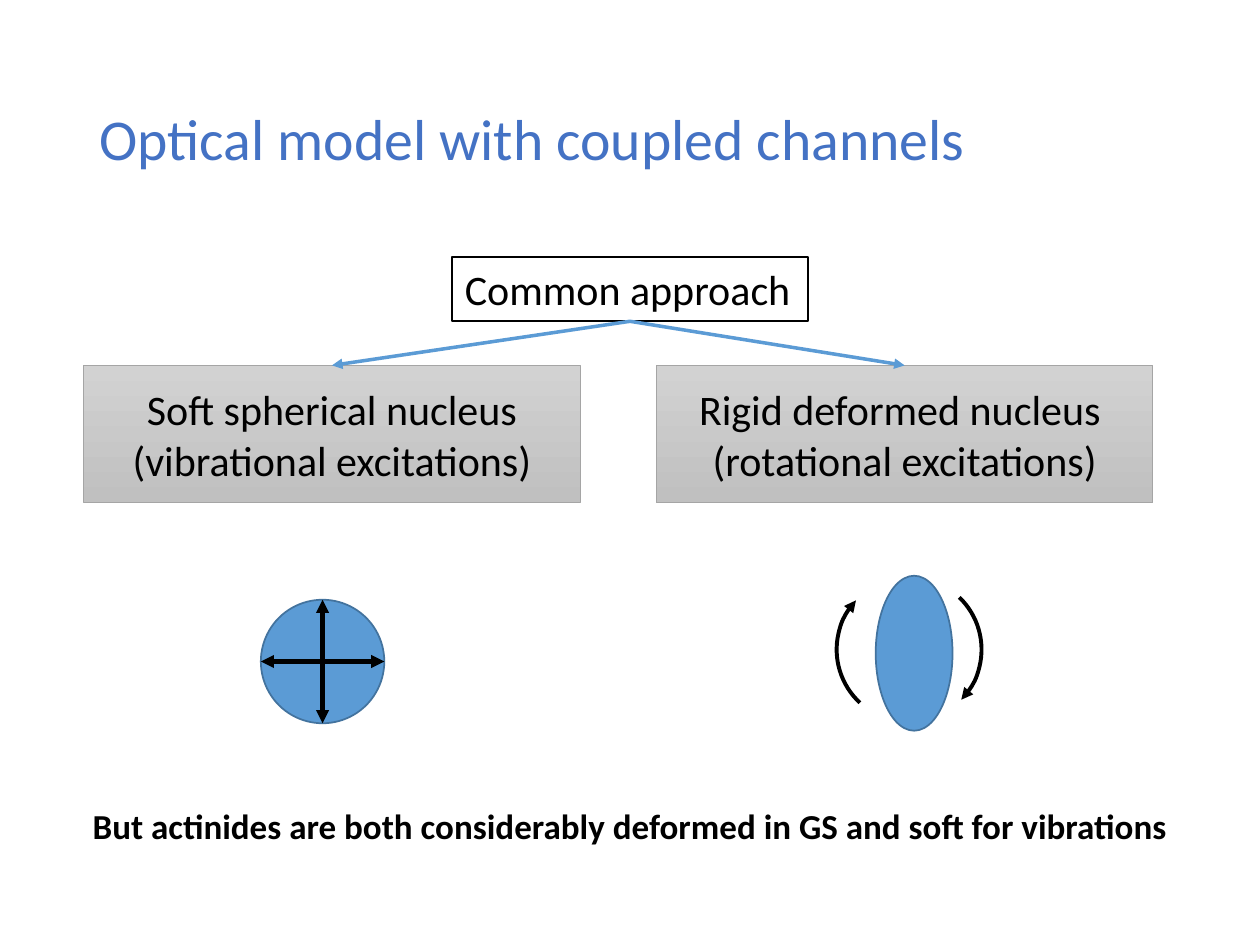
from lxml import etree
from pptx import Presentation
from pptx import util as u
from pptx.dml.color import RGBColor
from pptx.enum import shapes as s, text as t
from pptx.oxml.ns import qn

THEME = dict(font="Calibri", title="4472C4", ink="000000", paper="FFFFFF",
             blue="5B9BD5", rim="43739E", edge="A5A5A5",
             shade=("D2D2D2", "C0C0C0"), head=33, body=24, foot=20)
WIDE, HIGH = 10, 7.5

# Places are percent of the slide: left, top, width, height
TITLE = "Optical model with coupled channels", (6.9, 5.33, 86.2, 19.33)
ROOT = "Common approach", (35.9, 27.2, 28.2, 6.8)
FOOT = ("But actinides are both considerably deformed in GS and soft for vibrations",
        (0, 84.53, 100, 5.87))
CASES = [("Soft spherical nucleus", "(vibrational excitations)"),
         ("Rigid deformed nucleus ", "(rotational excitations)")]
CASE, STEP = (6.65, 38.67, 39.4, 14.53), 45.45
SPHERE = (20.7, 63.47, 9.8, 13.07)
OVAL = (69.5, 60.93, 6.1, 16.4)
ORBIT, TURNS = (66.4, 61.07, 11.5, 15.33), (43.9, 222.8)

deck = Presentation()
deck.slide_width, deck.slide_height = u.Inches(WIDE), u.Inches(HIGH)
slide = deck.slides.add_slide(deck.slide_layouts[6])


def place(box):
    """Turn percent of the slide into lengths."""
    return [u.Inches(part * side / 100)
            for part, side in zip(box, (WIDE, HIGH) * 2)]


def color(name):
    return RGBColor.from_string(THEME.get(name, name))


def write(shape, lines, size, ink="ink", bold=False,
          align=t.PP_ALIGN.CENTER, anchor=t.MSO_ANCHOR.MIDDLE, wrap=True):
    frame = shape.text_frame
    frame.word_wrap, frame.vertical_anchor = wrap, anchor
    frame.text = "\n".join(lines)
    for para in frame.paragraphs:
        para.alignment = align
        font = para.font
        font.name, font.size, font.bold = THEME["font"], u.Pt(THEME[size]), bold
        font.color.rgb = color(ink)
    return frame


def draw(kind, box, fill, line, width):
    shape = slide.shapes.add_shape(kind, *place(box))
    shape.shadow.inherit = False
    if fill is None:
        shape.fill.background()
    elif fill == "shade":
        shape.fill.gradient()
        shape.fill.gradient_angle = 270
        for stop, tone in zip(shape.fill.gradient_stops, THEME["shade"]):
            stop.color.rgb = color(tone)
            stop.position = float(tone == THEME["shade"][-1])
    else:
        shape.fill.solid()
        shape.fill.fore_color.rgb = color(fill)
    shape.line.color.rgb, shape.line.width = color(line), u.Pt(width)
    return shape


def tip(shape, *ends):
    """Put triangle arrowheads on the named ends of a line."""
    line = shape.line._get_or_add_ln()
    for end in ends:
        etree.SubElement(line, qn("a:" + end), type="triangle")


def link(start, stop, tone, width, *ends):
    wire = slide.shapes.add_connector(
        s.MSO_CONNECTOR.STRAIGHT, *place(start), *place(stop))
    wire.line.color.rgb, wire.line.width = color(tone), u.Pt(width)
    tip(wire, *ends)
    etree.SubElement(wire._element.spPr, qn("a:effectLst"))
    return wire


def label(copy, box, size, **style):
    return write(slide.shapes.add_textbox(*place(box)), [copy], size, **style)


RECT, ROUND, ARC = (s.MSO_SHAPE.RECTANGLE, s.MSO_SHAPE.OVAL, s.MSO_SHAPE.ARC)

title = label(*TITLE, "head", ink="title", align=t.PP_ALIGN.LEFT)
title.paragraphs[0].line_spacing = 0.9

left, top, width, height = CASE
cases = []
for col, lines in enumerate(CASES):
    case = draw(RECT, (left + col * STEP, top, width, height), "shade", "edge", 0.5)
    write(case, lines, "body")
    cases.append(case)

for nucleus in (SPHERE, OVAL):
    draw(ROUND, nucleus, "blue", "rim", 1)

x, y, w, h = SPHERE
for start, stop in [((x + w / 2, y), (x + w / 2, y + h)),
                    ((x, y + h / 2), (x + w, y + h / 2))]:
    link(start, stop, "ink", 2.5, "headEnd", "tailEnd")

for turn in TURNS:
    arc = draw(ARC, ORBIT, None, "ink", 2.25)
    arc.rotation = turn
    tip(arc, "tailEnd")

label(*FOOT, "foot", bold=True, anchor=t.MSO_ANCHOR.TOP)

copy, box = ROOT
root = draw(RECT, box, "paper", "ink", 1)
write(root, [copy], "body", align=t.PP_ALIGN.LEFT,
      anchor=t.MSO_ANCHOR.TOP, wrap=False)
for case in cases:
    wire = link((0, 0), (0, 0), "blue", 2, "tailEnd")
    wire.begin_connect(root, 2)
    wire.end_connect(case, 0)

deck.save("out.pptx")
